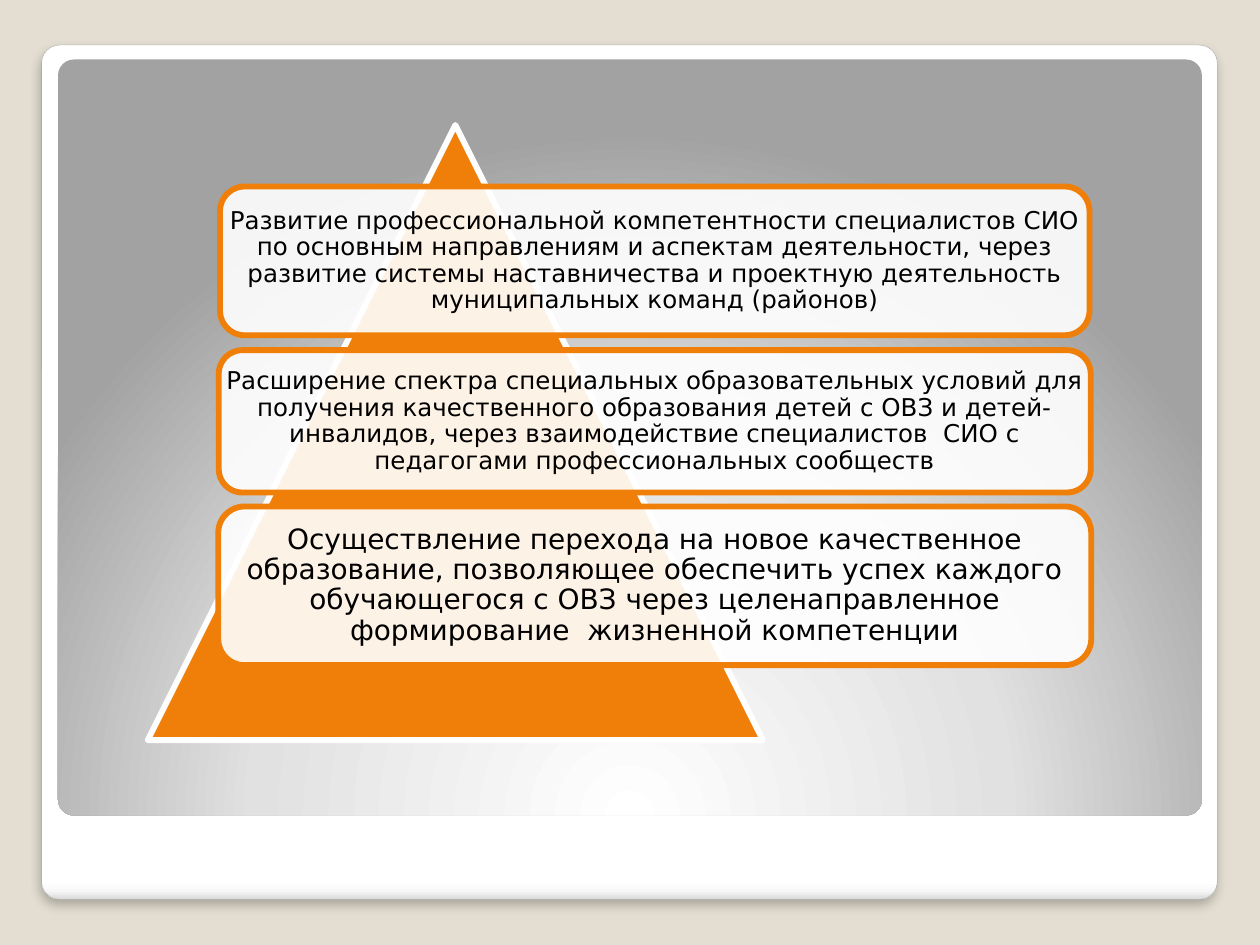
from dataclasses import dataclass

from pptx import Presentation
from pptx.dml.color import RGBColor
from pptx.enum.shapes import MSO_SHAPE
from pptx.enum.text import MSO_ANCHOR, PP_ALIGN
from pptx.oxml import parse_xml
from pptx.oxml.ns import nsdecls, qn
from pptx.util import Cm, Pt

ROUNDED = MSO_SHAPE.ROUNDED_RECTANGLE
TRIANGLE = MSO_SHAPE.ISOSCELES_TRIANGLE
CENTER = PP_ALIGN.CENTER
MIDDLE = MSO_ANCHOR.MIDDLE

FONT = "DejaVu Sans"
ORANGE, WHITE, BLACK = "F07F09", "FFFFFF", "000000"
OUTLINE_WIDTH = 3.35
BOX_CENTER = 13.2
CARD_CORNER = 0.021


@dataclass
class Goal:
    top: float
    width: float
    height: float
    font_size: int
    text: str


GOALS = [
    Goal(3.76, 17.53, 3, 14,
         "Развитие профессиональной компетентности специалистов СИО по основным "
         "направлениям и аспектам деятельности, через развитие системы "
         "наставничества и проектную деятельность муниципальных команд (районов)"),
    Goal(7.06, 17.58, 2.87, 14,
         "Расширение спектра специальных образовательных условий для получения "
         "качественного образования детей с ОВЗ и детей-инвалидов, через "
         "взаимодействие специалистов  СИО с педагогами профессиональных сообществ"),
    Goal(10.21, 17.6, 3.2, 16,
         "Осуществление перехода на новое качественное образование, позволяющее "
         "обеспечить успех каждого обучающегося с ОВЗ через целенаправленное "
         "формирование  жизненной компетенции"),
]


def color(value: str) -> RGBColor:
    return RGBColor.from_string(value)


def add_shape(slide, kind, left: float, top: float, width: float, height: float,
              line: str | None = None, line_width: float = OUTLINE_WIDTH):
    shape = slide.shapes.add_shape(kind, Cm(left), Cm(top), Cm(width), Cm(height))
    shape.shadow.inherit = False
    if line is None:
        shape.line.fill.background()
    else:
        shape.line.color.rgb = color(line)
        shape.line.width = Pt(line_width)
        shape.line._get_or_add_ln().append(parse_xml(f"<a:round {nsdecls('a')}/>"))
    return shape


def fill_solid(shape, value: str, opacity: int = 100) -> None:
    shape.fill.solid()
    shape.fill.fore_color.rgb = color(value)
    if opacity < 100:
        color_element = shape.fill._xPr.find(qn("a:solidFill"))[0]
        color_element.append(
            parse_xml(f'<a:alpha {nsdecls("a")} val="{opacity * 1000}"/>'))


def fill_gradient(shape, stops: list[tuple[int, str]], direction: str) -> None:
    """Fill with (percent, colour) stops; direction is an a:lin or a:path element."""
    stop_xml = "".join(
        f'<a:gs pos="{percent * 1000}"><a:srgbClr val="{value}"/></a:gs>'
        for percent, value in stops)
    shape.fill.background()
    properties = shape.fill._xPr
    properties.replace(properties.find(qn("a:noFill")), parse_xml(
        f'<a:gradFill {nsdecls("a")} rotWithShape="1">'
        f"<a:gsLst>{stop_xml}</a:gsLst>{direction}</a:gradFill>"))


def add_drop_shadow(shape, blur: float, distance: float, opacity: int) -> None:
    effects = shape.fill._xPr.find(qn("a:effectLst"))
    effects.append(parse_xml(
        f'<a:outerShdw {nsdecls("a")} blurRad="{Pt(blur)}" dist="{Pt(distance)}" '
        f'dir="5400000" algn="t" rotWithShape="0"><a:srgbClr val="{BLACK}">'
        f'<a:alpha val="{opacity * 1000}"/></a:srgbClr></a:outerShdw>'))


def write_text(shape, text: str, *, size: int, font_color: str = BLACK,
               alignment=CENTER, line_spacing: float = 0.9) -> None:
    frame = shape.text_frame
    frame.word_wrap = True
    frame.vertical_anchor = MIDDLE
    # The rounded corners already keep the text off the outline.
    frame.margin_left = frame.margin_right = Cm(0)
    frame.margin_top = frame.margin_bottom = Cm(0)
    paragraph = frame.paragraphs[0]
    paragraph.alignment = alignment
    paragraph.line_spacing = line_spacing
    run = paragraph.add_run()
    run.text = text
    run.font.name = FONT
    run.font.size = Pt(size)
    run.font.color.rgb = color(font_color)


def add_backdrop(slide) -> None:
    slide.background.fill.solid()
    slide.background.fill.fore_color.rgb = color("E3DED1")

    card = add_shape(slide, ROUNDED, 0.84, 0.91, 23.7, 17.22, "A4A4A4", 0.16)
    card.adjustments[0] = CARD_CORNER
    fill_gradient(card, [(0, WHITE), (98, WHITE), (99, "F7F7F7"), (100, "DADADA")],
                  '<a:lin ang="5400000" scaled="0"/>')
    add_drop_shadow(card, blur=6, distance=4, opacity=25)

    panel = add_shape(slide, ROUNDED, 1.17, 1.2, 23.06, 15.24)
    panel.adjustments[0] = CARD_CORNER
    fill_gradient(panel, [(0, WHITE), (55, "E1E1E1"), (100, "A2A2A2")],
                  '<a:path path="circle"><a:fillToRect l="50000" t="175000" '
                  'r="50000" b="-75000"/></a:path>')


def add_goal(slide, goal: Goal) -> None:
    box = add_shape(slide, ROUNDED, BOX_CENTER - goal.width / 2, goal.top,
                    goal.width, goal.height, ORANGE)
    fill_solid(box, WHITE, opacity=90)
    write_text(box, goal.text, size=goal.font_size)


def main() -> None:
    presentation = Presentation()
    presentation.slide_width, presentation.slide_height = Cm(25.4), Cm(19.05)
    blank_layout = presentation.slide_layouts[6]
    slide = presentation.slides.add_slide(blank_layout)

    add_backdrop(slide)
    pyramid = add_shape(slide, TRIANGLE, 2.98, 2.52, 12.4, 12.4, WHITE)
    fill_solid(pyramid, ORANGE)
    for goal in GOALS:
        add_goal(slide, goal)

    presentation.save("out.pptx")


if __name__ == "__main__":
    main()
